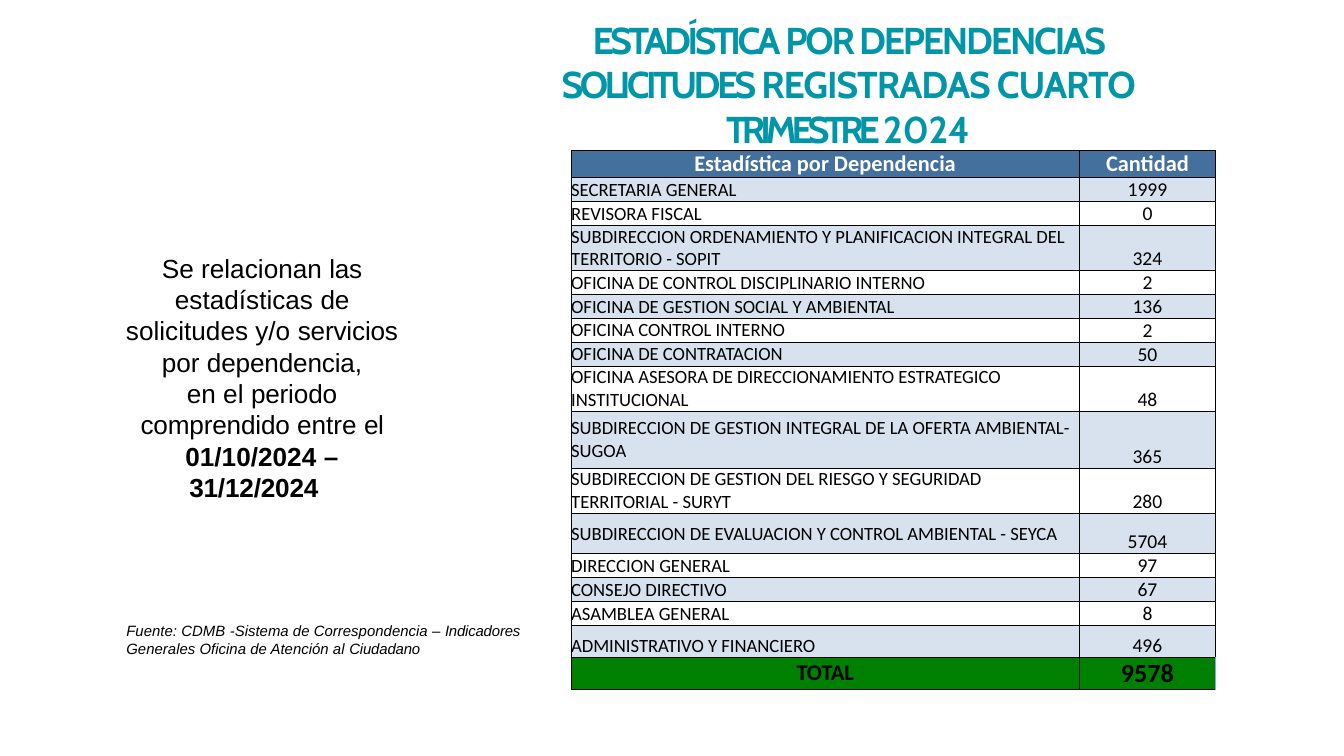
from lxml.etree import SubElement
from pptx import Presentation
from pptx.dml.color import RGBColor
from pptx.enum.text import MSO_ANCHOR, PP_ALIGN
from pptx.oxml.ns import qn
from pptx.util import Pt

HUES = {"teal": "0096A7", "ink": "000000", "white": "FFFFFF", "head": "44709D",
        "band": "D7E2EE", "total": "008000", "edge": "87A9CB"}
MID, LOW = MSO_ANCHOR.MIDDLE, MSO_ANCHOR.BOTTOM

TITLE = [("ESTADÍSTICA ", -1.8), ("POR DEPENDENCIAS ", -1.2), ("SOLICITUDES ", -1.9),
         ("REGISTRADAS CUARTO ", -0.6), ("TRIMESTRE ", -2.7), ("2024", -0.2)]
SOURCE = [("Fuente: CDMB ", 0), ("-", -0.1), ("Sistema de Correspondencia – ", 0),
          ("Indicadores ", -0.1), ("Generales Oficina de Atención al ", 0), ("Ciudadano", -0.1)]
INTRO = [("Se relacionan ", 0), ("las ", -0.2), ("estadísticas ", 0), ("de ", -0.2),
         ("solicitudes y/o ", 0), ("servicios ", -0.1), ("por ", 0), ("dependencia,", -0.1)]
PERIOD = [("en el ", 0), ("periodo comprendido ", -0.1), ("entre ", 0), ("el ", -0.3)]
START = [("01/10/2024 ", 0), ("–", -0.5)]
END = [("31/12/2024", -0.1)]

ROWS = [
    ("SECRETARIA GENERAL", 1999, 12.8, LOW),
    ("REVISORA FISCAL", 0, 12.8, LOW),
    ("SUBDIRECCION ORDENAMIENTO Y PLANIFICACION INTEGRAL DEL TERRITORIO - SOPIT", 324, 24.3, LOW),
    ("OFICINA DE CONTROL DISCIPLINARIO INTERNO", 2, 12.8, LOW),
    ("OFICINA DE GESTION SOCIAL Y AMBIENTAL", 136, 12.8, LOW),
    ("OFICINA CONTROL INTERNO", 2, 12.8, MID),
    ("OFICINA DE CONTRATACION", 50, 12.8, MID),
    ("OFICINA ASESORA DE DIRECCIONAMIENTO ESTRATEGICO INSTITUCIONAL", 48, 24.3, MID),
    ("SUBDIRECCION DE GESTION INTEGRAL DE LA OFERTA AMBIENTAL- SUGOA", 365, 30.4, MID),
    ("SUBDIRECCION DE GESTION DEL RIESGO Y SEGURIDAD TERRITORIAL - SURYT", 280, 24.3, MID),
    ("SUBDIRECCION DE EVALUACION Y CONTROL AMBIENTAL - SEYCA", 5704, 21.5, MID),
    ("DIRECCION GENERAL", 97, 12.8, LOW),
    ("CONSEJO DIRECTIVO", 67, 12.8, LOW),
    ("ASAMBLEA GENERAL", 8, 12.8, LOW),
    ("ADMINISTRATIVO Y FINANCIERO", 496, 17.2, LOW),
]


def write(para, text, size=10, face="Calibri", hue="ink", bold=False, slant=False,
          space=0, center=False):
    para.alignment = PP_ALIGN.CENTER if center else PP_ALIGN.LEFT
    run = para.add_run()
    run.text = text
    font = run.font
    font.size, font.name, font.bold, font.italic = Pt(size), face, bold, slant
    font.color.rgb = RGBColor.from_string(HUES[hue])
    if space:
        run._r.get_or_add_rPr().set("spc", str(round(space * 100)))


class Deck:
    def __init__(self, wide, high):
        self.show = Presentation()
        self.show.slide_width, self.show.slide_height = Pt(wide), Pt(high)
        self.slide = self.show.slides.add_slide(self.show.slide_layouts[6])

    def box(self, left, top, wide, high, inset):
        frame = self.slide.shapes.add_textbox(Pt(left), Pt(top), Pt(wide), Pt(high)).text_frame
        frame.word_wrap = True
        frame.margin_left = frame.margin_right = frame.margin_bottom = 0
        frame.margin_top = Pt(inset)
        return frame

    def line(self, para, runs, left=0, right=0, **style):
        props = para._p.get_or_add_pPr()
        props.set("marL", str(Pt(left)))
        props.set("marR", str(Pt(right)))
        for text, space in runs:
            write(para, text, space=space, **style)

    def table(self, left, top, cols, highs):
        grid = self.slide.shapes.add_table(len(highs), len(cols), Pt(left), Pt(top),
                                           Pt(sum(cols)), Pt(sum(highs))).table
        grid.first_row = grid.horz_banding = False
        for col, wide in zip(grid.columns, cols):
            col.width = Pt(wide)
        for row, high in zip(grid.rows, highs):
            row.height = Pt(high)
        return grid

    def cell(self, cell, text, fill=None, anchor=MID, right="ink", **style):
        cell.margin_left = cell.margin_right = cell.margin_top = cell.margin_bottom = 0
        cell.vertical_anchor = anchor
        props = cell._tc.get_or_add_tcPr()
        for side in "LRTB":
            edge = SubElement(props, qn("a:ln" + side), w=str(Pt(0.5)))
            paint = SubElement(edge, qn("a:solidFill"))
            hue = right if side == "R" else "ink"
            SubElement(paint, qn("a:srgbClr"), val=HUES[hue])
        if fill:
            cell.fill.solid()
            cell.fill.fore_color.rgb = RGBColor.from_string(HUES[fill])
        else:
            cell.fill.background()
        write(cell.text_frame.paragraphs[0], text, **style)


def main():
    deck = Deck(720, 405)

    title = deck.box(295.2, 6.5, 318.2, 74.2, 2.5)
    deck.line(title.paragraphs[0], TITLE, size=20, face="Cabin", hue="teal", bold=True, center=True)

    source = deck.box(67.7, 331.2, 214.6, 21.6, 1.7)
    deck.line(source.paragraphs[0], SOURCE, size=8, face="Arial", slant=True)

    intro = deck.box(66.2, 133.2, 148.3, 136.8, 1.8)
    style = {"size": 14, "face": "Arial", "center": True}
    deck.line(intro.paragraphs[0], INTRO, **style)
    period = intro.add_paragraph()
    deck.line(period, PERIOD, left=8.6, right=8.6, **style)
    deck.line(period, START, left=8.6, right=8.6, bold=True, **style)
    deck.line(intro.add_paragraph(), END, right=8.6, bold=True, **style)

    highs = [14.6] + [row[2] for row in ROWS] + [17.1]
    grid = deck.table(306, 80.6, [272.2, 73.1], highs)
    head = {"fill": "head", "size": 12, "hue": "white", "bold": True, "center": True}
    deck.cell(grid.cell(0, 0), "Estadística por Dependencia", **head)
    deck.cell(grid.cell(0, 1), "Cantidad", **head)
    for i, (name, count, high, anchor) in enumerate(ROWS, 1):
        fill = "band" if i % 2 else None
        deck.cell(grid.cell(i, 0), name, fill, anchor)
        deck.cell(grid.cell(i, 1), str(count), fill, LOW, size=10.5, center=True)
    last = len(ROWS) + 1
    total = {"fill": "total", "bold": True, "center": True}
    deck.cell(grid.cell(last, 0), "TOTAL", size=12, **total)
    deck.cell(grid.cell(last, 1), "9578", size=14, right="edge", **total)

    deck.show.save("out.pptx")


if __name__ == "__main__":
    main()
